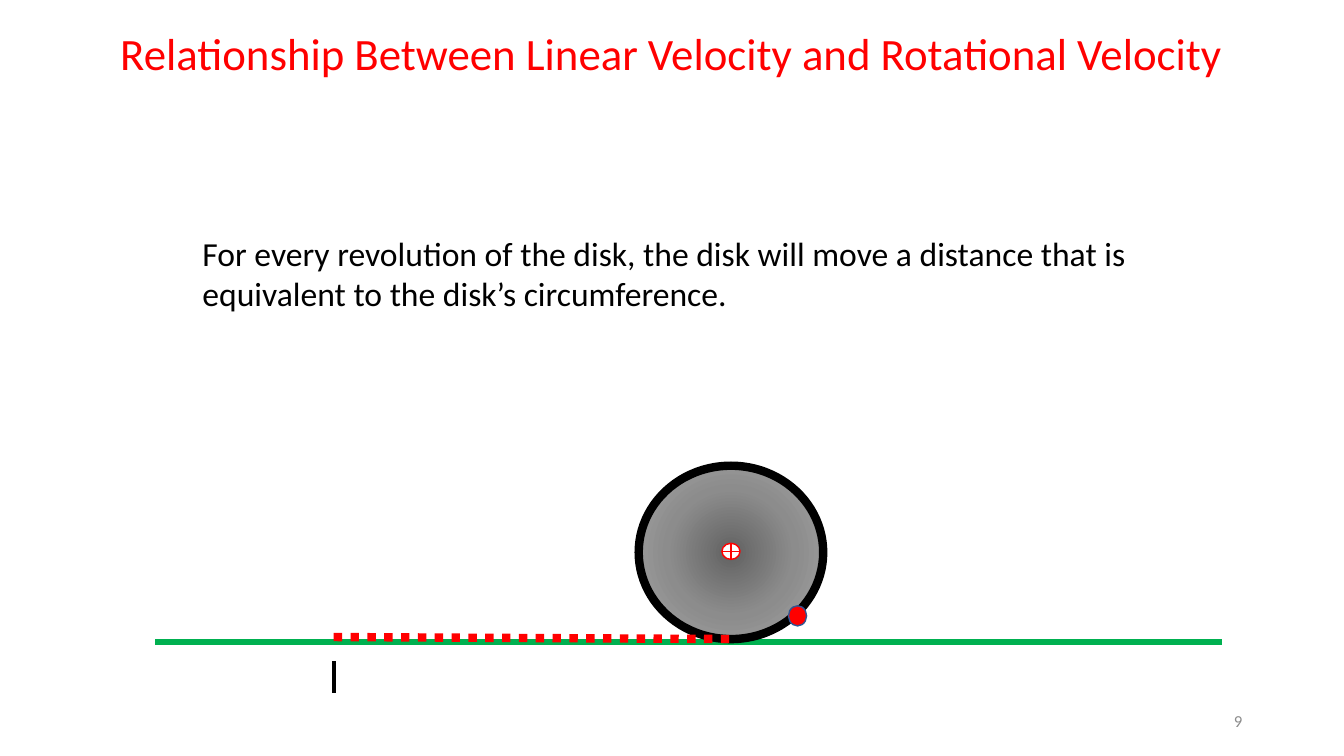
from lxml import etree
from pptx import Presentation
from pptx.dml.color import RGBColor
from pptx.enum.dml import MSO_LINE
from pptx.enum.shapes import MSO_CONNECTOR, MSO_SHAPE
from pptx.enum.text import MSO_ANCHOR, MSO_AUTO_SIZE, PP_ALIGN
from pptx.oxml import parse_xml
from pptx.oxml.ns import nsdecls, qn
from pptx.util import Inches, Pt

BLACK = RGBColor(0x00, 0x00, 0x00)
WHITE = RGBColor(0xFF, 0xFF, 0xFF)
RED = RGBColor(0xFF, 0x00, 0x00)
GREEN = RGBColor(0x00, 0xB0, 0x50)
BLUE = RGBColor(0x32, 0x54, 0x91)
GREY = RGBColor(0x8C, 0x8C, 0x8C)

# Content
FONT = "Calibri"
TITLE = "Relationship Between Linear Velocity and Rotational Velocity"
BODY = ("For every revolution of the disk, the disk will move a distance "
        "that is equivalent to the disk’s circumference.")
PAGE = "9"

# Lines: start, end, colour, width, dash
GROUND = ((1.54, 6.37), (12.12, 6.37), GREEN, 4.5, None)
TRAVEL = ((3.31, 6.32), (7.25, 6.34), RED, 6, MSO_LINE.ROUND_DOT)
START_MARK = ((3.31, 6.56), (3.31, 6.88), BLACK, 3, None)

# Disk parts: shape, centre, size, fill, line colour, line width
HUB_CENTER = (7.25, 5.48)
DISK = (MSO_SHAPE.OVAL, HUB_CENTER, (1.83, 1.72), GREY, BLACK, 6)
RIM_DOT = (MSO_SHAPE.OVAL, (7.91, 6.11), (0.18, 0.2), RED, BLUE, 1)
HUB = (MSO_SHAPE.FLOWCHART_OR, (7.25, 5.47), (0.18, 0.16), WHITE, RED, 1)
DISK_STOPS = [(0, "626262"), (50, "8C8C8C"), (100, "A6A6A6")]


def add_line(start, end, color, width, dash):
    points = [Inches(v) for v in start + end]
    line = slide.shapes.add_connector(MSO_CONNECTOR.STRAIGHT, *points)
    line.line.color.rgb = color
    line.line.width = Pt(width)
    if dash:
        line.line.dash_style = dash
    etree.SubElement(line._element.spPr, qn("a:effectLst"))


def add_part(kind, center, size, fill, color, width):
    corner = [c - s / 2 for c, s in zip(center, size)]
    sp = slide.shapes.add_shape(kind, *[Inches(v) for v in (*corner, *size)])
    sp.shadow.inherit = False
    sp.fill.solid()
    sp.fill.fore_color.rgb = fill
    sp.line.color.rgb = color
    sp.line.width = Pt(width)
    return sp


def set_radial_fill(sp, stops):
    gs = "".join(f'<a:gs pos="{pos * 1000}"><a:srgbClr val="{color}"/></a:gs>'
                 for pos, color in stops)
    grad = parse_xml(
        f'<a:gradFill {nsdecls("a")} rotWithShape="1"><a:gsLst>{gs}</a:gsLst>'
        '<a:path path="circle">'
        '<a:fillToRect l="50000" t="50000" r="50000" b="50000"/>'
        '</a:path></a:gradFill>')
    spPr = sp._element.spPr
    spPr.replace(spPr.find(qn("a:solidFill")), grad)


def write(sp, box, text, size, color, align, anchor=MSO_ANCHOR.TOP):
    sp.left, sp.top, sp.width, sp.height = [Inches(v) for v in box]
    tf = sp.text_frame
    tf.text = text
    tf.word_wrap = True
    tf.auto_size = MSO_AUTO_SIZE.NONE
    tf.vertical_anchor = anchor
    p = tf.paragraphs[0]
    p.alignment = align
    font = p.runs[0].font
    font.name, font.size, font.color.rgb = FONT, Pt(size), color


def add_text():
    return slide.shapes.add_textbox(0, 0, 0, 0)


prs = Presentation()
prs.slide_width, prs.slide_height = Inches(13.33), Inches(7.5)
slide = prs.slides.add_slide(prs.slide_layouts[5])

# Ground, disk and distance travelled
add_line(*GROUND)
set_radial_fill(add_part(*DISK), DISK_STOPS)
add_part(*RIM_DOT)
add_line(*TRAVEL)
add_part(*HUB)
add_line(*START_MARK)

# Text
write(slide.shapes.title, (1.05, 0.21, 11.22, 0.64), TITLE, 32, RED,
      PP_ALIGN.CENTER)
write(add_text(), (1.91, 2.26, 10.35, 0.91), BODY, 24, BLACK, PP_ALIGN.LEFT)
write(add_text(), (9.42, 6.95, 3, 0.4), PAGE, 12, GREY, PP_ALIGN.RIGHT,
      MSO_ANCHOR.MIDDLE)

prs.save("out.pptx")
